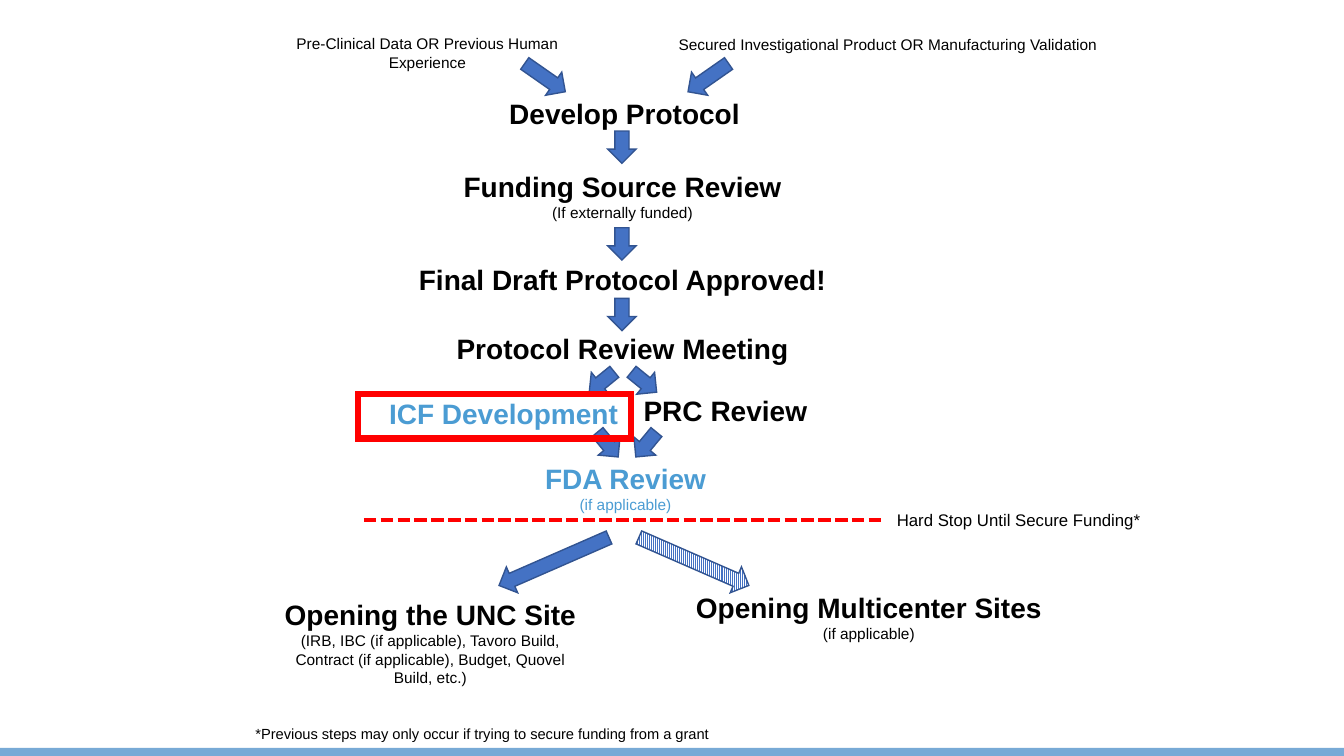
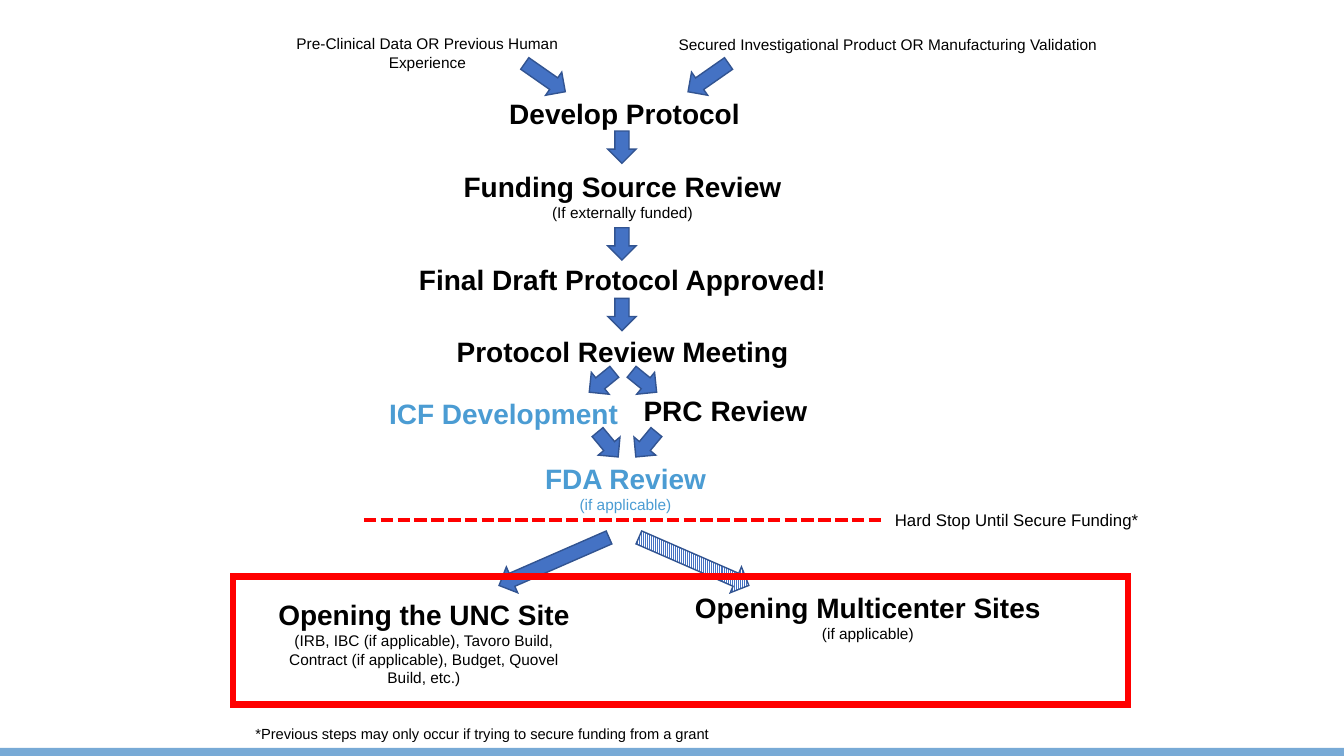
from dataclasses import dataclass, replace

from lxml.etree import SubElement as Sub
from pptx import Presentation
from pptx.dml.color import RGBColor
from pptx.enum.dml import MSO_LINE_DASH_STYLE as Dash, MSO_PATTERN_TYPE as Pattern
from pptx.enum.shapes import MSO_CONNECTOR as Link, MSO_SHAPE as Kind
from pptx.enum.text import MSO_AUTO_SIZE as Fit, PP_ALIGN as Align
from pptx.oxml.ns import qn
from pptx.util import Inches, Pt

# Slide size, and a grid of 40 columns by 30 rows
WIDE, TALL = Inches(13.333), Inches(7.5)
COLS, ROWS = 40, 30

BLACK = RGBColor(0x00, 0x00, 0x00)
WHITE = RGBColor(0xFF, 0xFF, 0xFF)
RED = RGBColor(0xFF, 0x00, 0x00)
SKY = RGBColor(0x4B, 0x9C, 0xD3)
BAND = RGBColor(0x78, 0xAA, 0xD6)
BLUE = RGBColor(0x44, 0x72, 0xC4)
NAVY = RGBColor(0x32, 0x54, 0x91)

FONT = "Arial"
HEAD, SMALL = 20, 11
THICK = 1.12  # rows
AXIS = 18.53  # column of the main flow


@dataclass(frozen=True)
class Label:
    """Text centred on column mid, with an optional smaller note."""
    text: str
    mid: float
    top: float
    wide: float
    tall: float = 1.76
    note: str = ""
    size: float = HEAD
    bold: bool = True
    color: RGBColor = BLACK


@dataclass(frozen=True)
class Arrow:
    mid: float
    row: float
    long: float = 0.96
    turn: float = 90
    hatch: bool = False


@dataclass(frozen=True)
class Fork:
    """Two mirrored arrows, each gap columns away from mid."""
    mid: float
    gap: float
    row: float
    long: float
    turn: float
    hatch: bool = False

    def arms(self) -> tuple[Arrow, Arrow]:
        return (Arrow(self.mid - self.gap, self.row, self.long, self.turn),
                Arrow(self.mid + self.gap, self.row, self.long,
                      180 - self.turn, self.hatch))


@dataclass(frozen=True)
class Box:
    left: float
    top: float
    wide: float
    tall: float


LABELS = {
    "data": Label("Pre-Clinical Data OR Previous Human Experience",
                  12.72, 1.16, 10.74, 1.88, size=SMALL, bold=False),
    "product": Label("Secured Investigational Product OR Manufacturing Validation",
                     26.43, 1.2, 13.26, 1.16, size=SMALL, bold=False),
    "develop": Label("Develop Protocol", 18.59, 3.64, 7.77),
    "funding": Label("Funding Source Review", AXIS, 6.52, 12.69, 2.56,
                     "(If externally funded)"),
    "final": Label("Final Draft Protocol Approved!", AXIS, 10.24, 12.99),
    "meeting": Label("Protocol Review Meeting", AXIS, 12.96, 11.67),
    "consent": Label("ICF Development", 14.99, 15.52, 7.47, color=SKY),
    "review": Label("PRC Review", 21.59, 15.4, 6.03),
    "agency": Label("FDA Review", 18.62, 18.12, 7.77, 2.56,
                    "(if applicable)", color=SKY),
    "stop": Label("Hard Stop Until Secure Funding*", 30.32, 20.04, 8.97, 1.2,
                  size=12, bold=False),
    "site": Label("Opening the UNC Site", 12.81, 23.52, 9.3, 3.96,
                  "(IRB, IBC (if applicable), Tavoro Build, Contract "
                  "(if applicable), Budget, Quovel Build, etc.)"),
    "multi": Label("Opening Multicenter Sites", 25.86, 23.24, 11.22, 2.48,
                   "(if applicable)"),
    "foot": Label("*Previous steps may only occur if trying to secure "
                  "funding from a grant", 14.36, 28.56, 15.21, 1.16,
                  size=10.5, bold=False),
}
DOWNS = [Arrow(18.51, row) for row in (5.84, 9.68, 12.48)]
FORKS = [
    Fork(18.65, 2.43, 3.08, 1.47, 34.9),
    Fork(18.54, 0.63, 15.16, 0.96, 140.9),
    Fork(18.66, 0.57, 17.64, 0.96, 50.3),
    Fork(18.57, 2.08, 22.28, 3.57, 156.4, hatch=True),
]

# Each slide: the red frame, and the labels that differ there
PAGES = [
    (Box(10.65, 15.64, 8.13, 1.76), {}),
    (Box(6.93, 22.88, 26.64, 5.08), {
        "final": {"wide": 13.35},
        "meeting": {"top": 13.08, "wide": 12.51},
        "stop": {"mid": 30.26, "wide": 8.85},
        "site": {"mid": 12.62, "wide": 9.69},
        "multi": {"mid": 25.83, "wide": 11.16},
    }),
]


def across(cols: float) -> int:
    return round(WIDE * cols / COLS)


def down(rows: float) -> int:
    return round(TALL * rows / ROWS)


def place(box: Box) -> tuple[int, int, int, int]:
    return across(box.left), down(box.top), across(box.wide), down(box.tall)


def add_shape(slide, kind: Kind, box: Box):
    shape = slide.shapes.add_shape(kind, *place(box))
    shape.shadow.inherit = False
    return shape


def edge(shape, color: RGBColor, width: float) -> None:
    """Outline with sharp corners."""
    shape.line.color.rgb = color
    shape.line.width = Pt(width)
    line = shape._element.spPr.find(qn("a:ln"))
    Sub(line, qn("a:miter"), lim="800000")


def add_band(slide) -> None:
    band = add_shape(slide, Kind.RECTANGLE, Box(0, 29.68, COLS, 0.32))
    band.fill.solid()
    band.fill.fore_color.rgb = BAND
    band.line.fill.background()


def add_label(slide, item: Label) -> None:
    box = Box(item.mid - item.wide / 2, item.top, item.wide, item.tall)
    frame = slide.shapes.add_textbox(*place(box)).text_frame
    frame.word_wrap = True
    frame.auto_size = Fit.SHAPE_TO_FIT_TEXT
    frame.text = item.text
    if item.note:
        frame.add_paragraph().text = item.note
    styles = ((item.size, item.bold), (SMALL, False))
    for para, (size, bold) in zip(frame.paragraphs, styles):
        para.alignment = Align.CENTER
        for run in para.runs:
            run.font.name = FONT
            run.font.size = Pt(size)
            run.font.bold = bold
            run.font.color.rgb = item.color


def add_arrow(slide, item: Arrow) -> None:
    box = Box(item.mid - item.long / 2, item.row - THICK / 2, item.long, THICK)
    shape = add_shape(slide, Kind.RIGHT_ARROW, box)
    shape.rotation = item.turn
    if item.hatch:
        shape.fill.patterned()
        shape.fill.pattern = Pattern.LIGHT_VERTICAL
        shape.fill.back_color.rgb = WHITE
    else:
        shape.fill.solid()
    shape.fill.fore_color.rgb = BLUE
    edge(shape, NAVY, 1)


def add_stop(slide) -> None:
    row = down(20.64)
    line = slide.shapes.add_connector(Link.STRAIGHT, across(10.83), row,
                                      across(26.34), row)
    line.line.color.rgb = RED
    line.line.width = Pt(3)
    line.line.dash_style = Dash.SQUARE_DOT
    Sub(line._element.spPr, qn("a:effectLst"))


def add_frame(slide, box: Box) -> None:
    frame = add_shape(slide, Kind.RECTANGLE, box)
    frame.fill.background()
    edge(frame, RED, 4.5)


def main() -> None:
    deck = Presentation()
    deck.slide_width, deck.slide_height = WIDE, TALL
    blank = deck.slide_layouts[6]
    for frame, moves in PAGES:
        slide = deck.slides.add_slide(blank)
        add_band(slide)
        # Flow chart
        for arrow in DOWNS + [arm for fork in FORKS for arm in fork.arms()]:
            add_arrow(slide, arrow)
        for name, item in LABELS.items():
            add_label(slide, replace(item, **moves.get(name, {})))
        add_stop(slide)
        # Highlight
        add_frame(slide, frame)
    deck.save("out.pptx")


if __name__ == "__main__":
    main()
